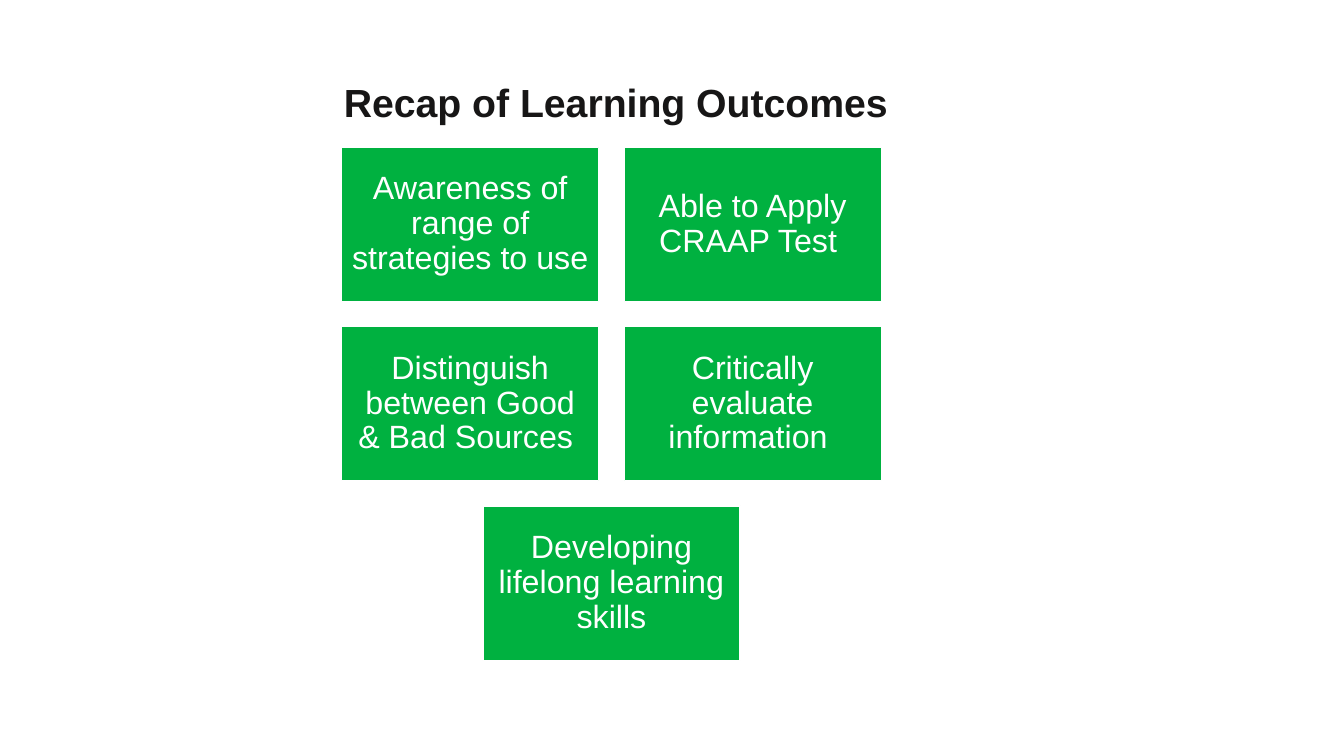
from pptx import Presentation
from pptx.dml.color import RGBColor
from pptx.enum.shapes import MSO_SHAPE
from pptx.enum.text import MSO_ANCHOR, PP_ALIGN
from pptx.util import Emu, Pt

COLOURS = {"green": "00B140", "white": "FFFFFF", "ink": "171616"}
OUTCOME_ROWS = [
    ["Awareness of range of strategies to use ", "Able to Apply CRAAP Test "],
    ["Distinguish between Good & Bad Sources ", "Critically evaluate information "],
    ["Developing lifelong learning skills"],
]
CARD_WIDTH, CARD_HEIGHT = 255, 153
COLUMN_STEP, ROW_STEP = 280, 178
GRID_CENTRE, GRID_TOP = 606, 146


class SlideBuilder:
    EMU_PER_PX = 9144
    FONT = "Arial"

    def __init__(self, deck):
        self.page = deck.slides.add_slide(deck.slide_layouts[5])

    @classmethod
    def px(cls, length):
        return Emu(length * cls.EMU_PER_PX)

    def colour(self, name):
        return RGBColor.from_string(COLOURS[name])

    def add_text(self, box, text, size, colour, align, anchor, bold=False, spacing=1.0):
        frame = box.text_frame
        frame.word_wrap = True
        frame.vertical_anchor = anchor
        para = frame.paragraphs[0]
        para.alignment = align
        para.line_spacing = spacing
        span = para.add_run()
        span.text = text
        span.font.name = self.FONT
        span.font.size = Pt(size)
        span.font.bold = bold
        span.font.color.rgb = self.colour(colour)
        return frame

    def title(self, text, left, top, width, height):
        box = self.page.shapes.title
        box.left, box.top = self.px(left), self.px(top)
        box.width, box.height = self.px(width), self.px(height)
        self.add_text(box, text, 28, "ink", PP_ALIGN.LEFT, MSO_ANCHOR.TOP, bold=True)

    def card(self, text, left, top):
        box = self.page.shapes.add_shape(
            MSO_SHAPE.RECTANGLE, self.px(left), self.px(top),
            self.px(CARD_WIDTH), self.px(CARD_HEIGHT))
        box.shadow.inherit = False
        box.fill.solid()
        box.fill.fore_color.rgb = self.colour("green")
        box.line.color.rgb = self.colour("white")
        box.line.width = Pt(0.85)
        frame = self.add_text(box, text, 23, "white", PP_ALIGN.CENTER,
                              MSO_ANCHOR.MIDDLE, spacing=0.9)
        frame.margin_left = frame.margin_right = self.px(10)
        frame.margin_top = frame.margin_bottom = self.px(10)


def main():
    deck = Presentation()
    deck.slide_width = SlideBuilder.px(1333)
    deck.slide_height = SlideBuilder.px(750)
    builder = SlideBuilder(deck)
    builder.title("Recap of Learning Outcomes", 331, 73, 643, 57)
    for row, outcomes in enumerate(OUTCOME_ROWS):
        row_width = (len(outcomes) - 1) * COLUMN_STEP + CARD_WIDTH
        row_left = GRID_CENTRE - row_width // 2
        for column, outcome in enumerate(outcomes):
            builder.card(outcome, row_left + column * COLUMN_STEP,
                         GRID_TOP + row * ROW_STEP)
    deck.save("out.pptx")


if __name__ == "__main__":
    main()
